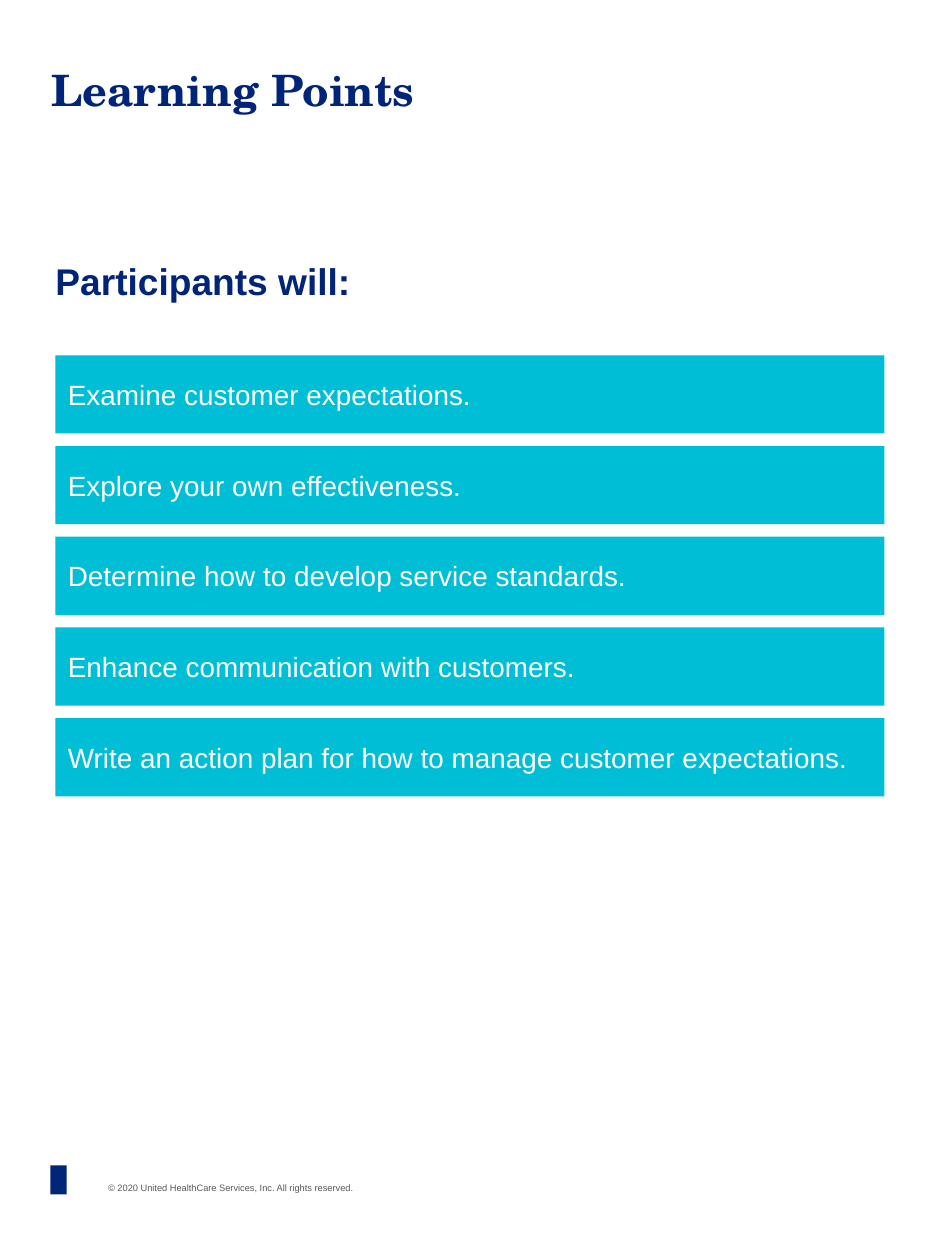
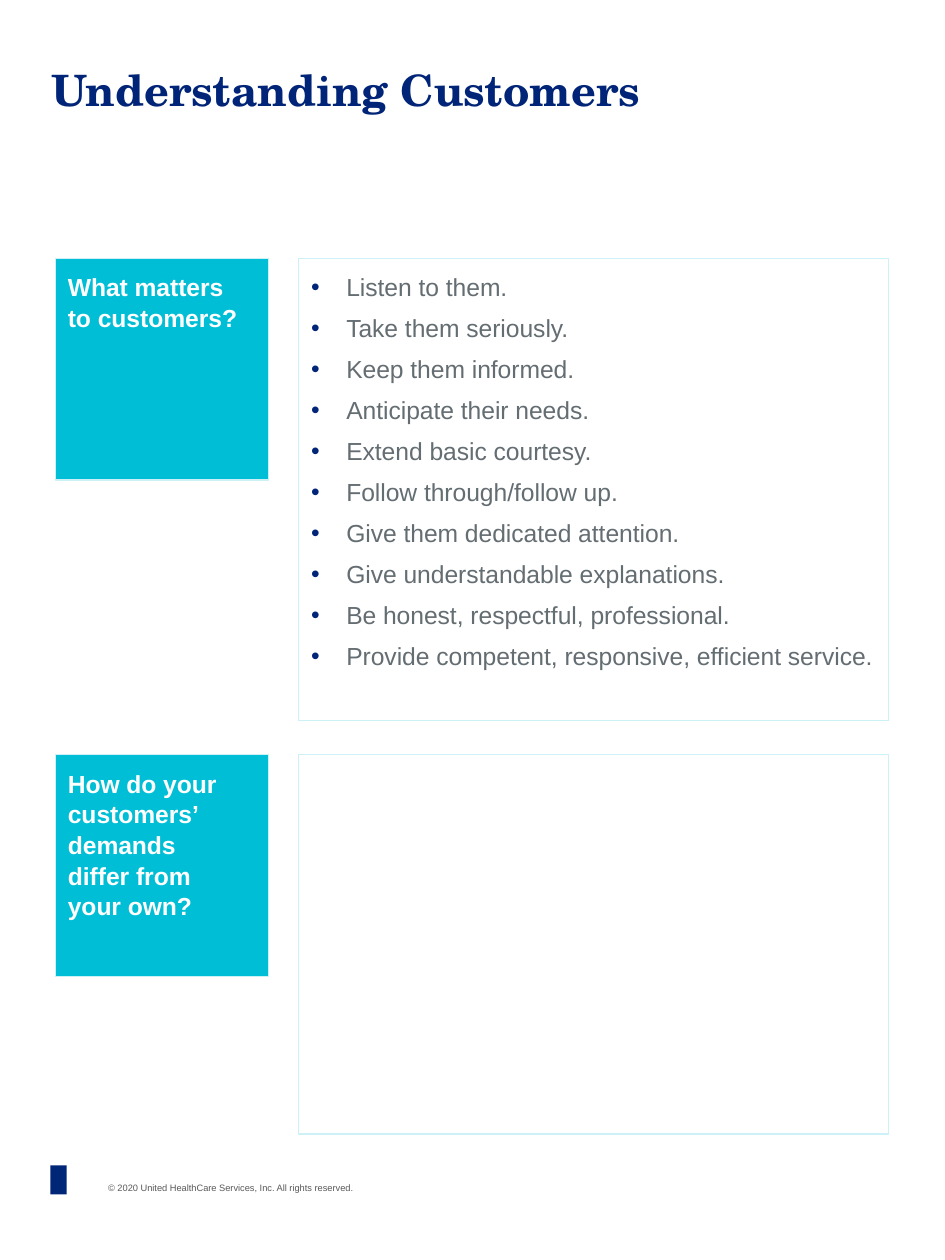
"""Build two handout pages on customer expectations."""
from dataclasses import dataclass

from lxml import etree
from pptx import Presentation
from pptx.dml.color import RGBColor
from pptx.enum import shapes, text
from pptx.oxml import ns
from pptx.util import Inches, Pt


@dataclass(frozen=True)
class Theme:
    navy: str = "002477"
    mark: str = "002677"
    teal: str = "00BED5"
    pale: str = "CCF2F7"
    gray: str = "646D72"
    note: str = "595959"
    white: str = "FFFFFF"
    serif: str = "TeX Gyre Schola"
    sans: str = "Arial"
    title: float = 24.7
    head: float = 21.2
    bar: float = 15.9
    body: float = 14.1
    foot: float = 5.3


T = Theme()
FOOT = "© 2020 United HealthCare Services, Inc. All rights reserved."
GOALS = {
    "title": "Learning Points",
    "head": "Participants will:",
    "bars": [
        "Examine customer expectations.",
        "Explore your own effectiveness.",
        "Determine how to develop service standards.",
        "Enhance communication with customers.",
        "Write an action plan for how to manage customer expectations.",
    ],
}
NEEDS = {
    "title": "Understanding Customers",
    "rows": [
        {
            "ask": "What matters \nto customers?",
            "top": 2.05,
            "high": 3.67,
            "tips": [
                "Listen to them.",
                "Take them seriously.",
                "Keep them informed.",
                "Anticipate their needs.",
                "Extend basic courtesy.",
                "Follow through/follow up.",
                "Give them dedicated attention.",
                "Give understandable explanations.",
                "Be honest, respectful, professional.",
                "Provide competent, responsive, efficient service.",
            ],
        },
        {
            "ask": "How do your customers’ demands \ndiffer from \nyour own?",
            "top": 5.99,
            "high": 3.01,
            "tips": [],
        },
    ],
}
LEFT = 0.44
TOP = 2.05


def rgb(tone):
    return RGBColor.from_string(tone)


def bullet(para):
    para.level = 1
    prop = para._p.get_or_add_pPr()
    prop.set("marL", str(Inches(0.28)))
    prop.set("indent", str(Inches(-0.31)))
    tint = etree.SubElement(prop, ns.qn("a:buClr"))
    etree.SubElement(tint, ns.qn("a:srgbClr")).set("val", T.navy)
    etree.SubElement(prop, ns.qn("a:buFont")).set("typeface", T.sans)
    etree.SubElement(prop, ns.qn("a:buChar")).set("char", "•")


def write(shape, lines, size, tone, bold=False, face=T.sans, pad=(0.1, 0.05),
          mid=False, after=None, dots=False):
    frame = shape.text_frame
    frame.word_wrap = True
    frame.margin_left = frame.margin_right = Inches(pad[0])
    frame.margin_top = frame.margin_bottom = Inches(pad[1])
    frame.vertical_anchor = text.MSO_ANCHOR.MIDDLE if mid else text.MSO_ANCHOR.TOP
    for i, line in enumerate(lines):
        para = frame.add_paragraph() if i else frame.paragraphs[0]
        para.text = line
        para.alignment = text.PP_ALIGN.LEFT
        if dots:
            bullet(para)
        if after is not None:
            para.space_after = Pt(after)
            para.line_spacing = 1.04
        font = para.font
        font.name, font.size, font.bold = face, Pt(size), bold
        font.color.rgb = rgb(tone)


def label(slide, box, *args, **style):
    write(slide.shapes.add_textbox(*map(Inches, box)), *args, **style)


def block(slide, box, fill=None, line=None):
    shape = slide.shapes.add_shape(shapes.MSO_SHAPE.RECTANGLE, *map(Inches, box))
    shape.shadow.inherit = False
    if fill:
        shape.fill.solid()
        shape.fill.fore_color.rgb = rgb(fill)
    else:
        shape.fill.background()
    if line:
        shape.line.color.rgb = rgb(line)
        shape.line.width = Pt(0.75)
    else:
        shape.line.fill.background()
    return shape


def page(deck, title):
    slide = deck.slides.add_slide(deck.slide_layouts[6])
    label(slide, (0.76, 9.33, 2.85, 0.19), [FOOT], T.foot, T.note)
    block(slide, (0.4, 9.25, 0.13, 0.23), T.mark)
    label(slide, (0.31, 0.45, 6.79, 0.89), [title], T.title, T.navy,
          bold=True, face=T.serif)
    return slide


def goals(deck):
    slide = page(deck, GOALS["title"])
    label(slide, (LEFT, TOP, 6.61, 0.36), [GOALS["head"]], T.head, T.navy,
          bold=True, pad=(0, 0))
    for i, line in enumerate(GOALS["bars"]):
        bar = block(slide, (LEFT, 2.82 + i * 0.72, 6.58, 0.62), T.teal)
        write(bar, [line], T.bar, T.white, pad=(0.1, 0.09), mid=True)


def needs(deck):
    slide = page(deck, NEEDS["title"])
    for row in NEEDS["rows"]:
        ask = block(slide, (LEFT, row["top"], 1.69, 1.76), T.teal, T.pale)
        write(ask, [row["ask"]], T.body, T.white, bold=True, pad=(0.1, 0.1),
              after=5.9)
        tips = block(slide, (2.37, row["top"], 4.68, row["high"]), line=T.pale)
        write(tips, row["tips"], T.body, T.gray, pad=(0.1, 0.1), after=5.9,
              dots=True)


def main():
    deck = Presentation()
    deck.slide_width, deck.slide_height = Inches(7.5), Inches(10)
    goals(deck)
    needs(deck)
    deck.save("out.pptx")


if __name__ == "__main__":
    main()
